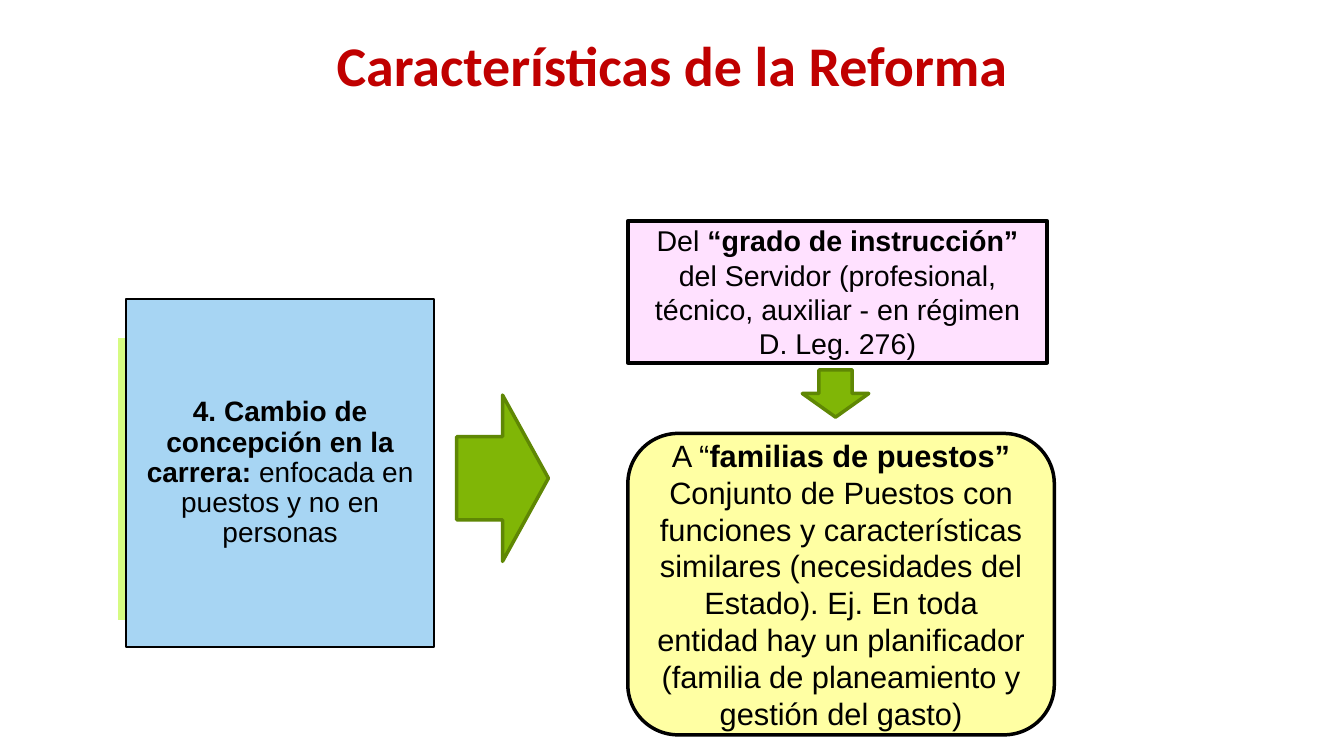
from pptx import Presentation
from pptx.dml.color import RGBColor
from pptx.enum.shapes import MSO_SHAPE as Shape
from pptx.enum.text import MSO_ANCHOR as Anchor, PP_ALIGN as Align
from pptx.util import Pt


def color(hex_code):
    return RGBColor.from_string(hex_code)


def add_block(kind, box, fill, line, line_width, paragraphs=(), size=20):
    """Add a filled shape; each paragraph is a list of (text, bold) runs."""
    shape = slide.shapes.add_shape(kind, *map(Pt, box))
    shape.shadow.inherit = False
    shape.fill.solid()
    shape.fill.fore_color.rgb = color(fill)
    shape.line.color.rgb = color(line)
    shape.line.width = Pt(line_width)
    frame = shape.text_frame
    frame.word_wrap = True
    frame.vertical_anchor = Anchor.MIDDLE
    for index, runs in enumerate(paragraphs):
        paragraph = frame.add_paragraph() if index else frame.paragraphs[0]
        paragraph.alignment = Align.CENTER
        paragraph.font.name = "Arial"
        paragraph.font.size = Pt(size)
        paragraph.font.color.rgb = color("000000")
        for text, bold in runs:
            run = paragraph.add_run()
            run.text = text
            run.font.bold = bold
    return shape


presentation = Presentation()
presentation.slide_width = Pt(960)
presentation.slide_height = Pt(540)
slide = presentation.slides.add_slide(presentation.slide_layouts[5])

# Title
title = slide.shapes.title
title.left, title.top, title.width, title.height = map(Pt, (156, 21.6, 648, 49))
title.text_frame.text = "Características de la Reforma"
title.text_frame.vertical_anchor = Anchor.MIDDLE
heading = title.text_frame.paragraphs[0]
heading.alignment = Align.CENTER
heading.font.name = "Calibri"
heading.font.size = Pt(40)
heading.font.bold = True
heading.font.color.rgb = color("C00000")

# Starting point: degree of instruction
degree = add_block(
    Shape.RECTANGLE, (448.5, 157.7, 299.5, 101.5), "FFE1FF", "000000", 2.5,
    [[("Del ", False), ("“grado de instrucción” ", True),
      ("del Servidor (profesional, técnico, auxiliar - en régimen D. Leg. 276)", False)]],
    20.4)
degree.text_frame.paragraphs[0].space_before = Pt(20)

# Change of concept, with the green panel behind it
add_block(Shape.RECTANGLE, (83.5, 241.2, 220.3, 202.3), "D6FB82", "FFFFFF", 1)
concept = add_block(
    Shape.RECTANGLE, (90, 213.8, 220.3, 248.4), "A7D5F3", "000000", 1.5,
    [[("4. Cambio de concepción en la carrera: ", True),
      ("enfocada en puestos y no en personas", False)]])
concept.text_frame.margin_top = concept.text_frame.margin_bottom = Pt(7.2)
concept.text_frame.paragraphs[0].line_spacing = 0.9
concept.text_frame.paragraphs[0].space_after = Pt(7)

# Destination: job families
add_block(
    Shape.ROUNDED_RECTANGLE, (448.5, 309.6, 304.6, 215.3), "FFFFA3", "000000", 2.5,
    [[("A “", False), ("familias de puestos”", True)],
     [("Conjunto de Puestos con funciones y características similares "
       "(necesidades del Estado). Ej. En toda entidad hay un planificador "
       "(familia de planeamiento y gestión del gasto)", False)]],
    22)

# Arrows
for kind, box in (
    (Shape.DOWN_ARROW, (573.1, 264.2, 47.5, 33.8)),
    (Shape.RIGHT_ARROW, (326.2, 282.2, 65.5, 118.8)),
):
    add_block(kind, box, "80B606", "5F8704", 2.5)

presentation.save("out.pptx")
